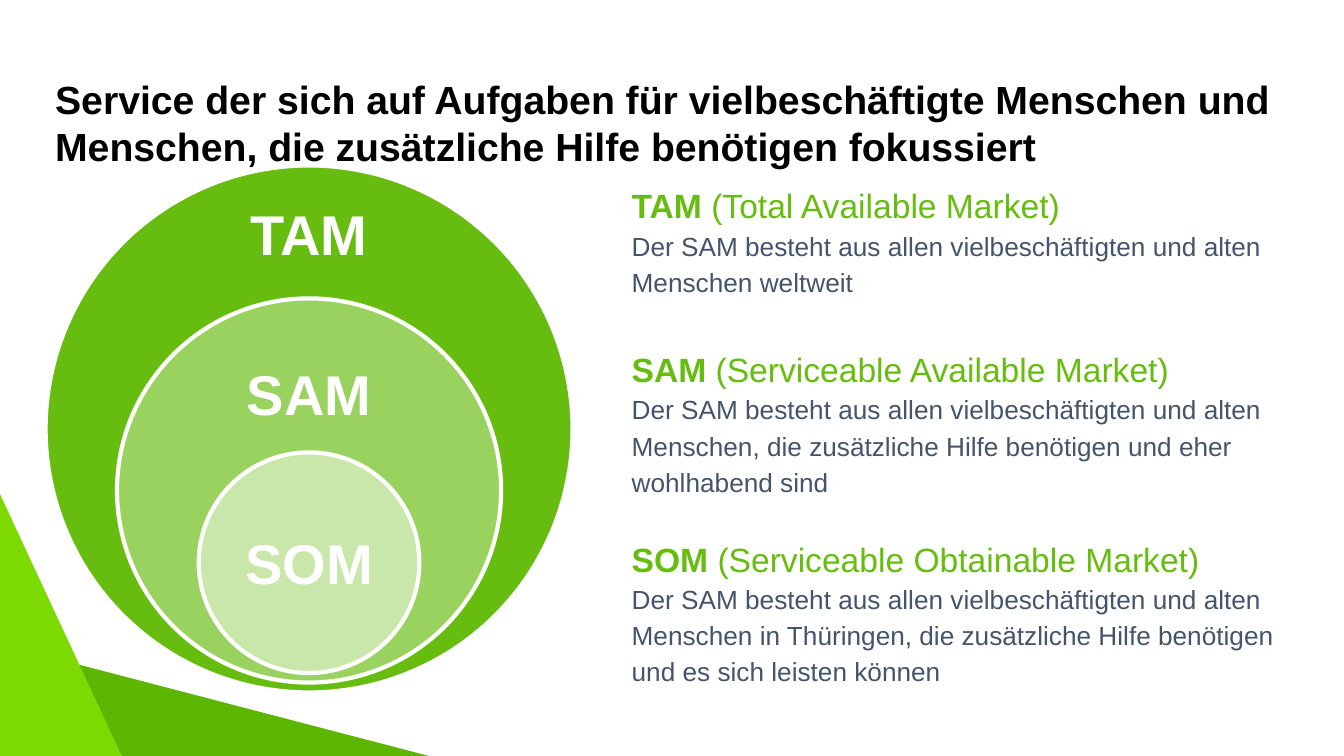
"""Market-size slide with nested TAM, SAM and SOM circles."""
from dataclasses import dataclass

from lxml import etree
from pptx import Presentation
from pptx.dml.color import RGBColor
from pptx.enum import shapes, text
from pptx.oxml import ns
from pptx.util import Cm, Pt

COLORS = {
    "black": "000000",
    "white": "FFFFFF",
    "green": "67BD0F",
    "dark_green": "5CB600",
    "bright_green": "7DDA00",
    "slate": "44546A",
}
FONT = "Arial"
CENTER_X = 7.79
LABEL_WIDTH, LABEL_HEIGHT = 5.56, 2.13
TITLE = ("Service der sich auf Aufgaben für vielbeschäftigte Menschen und "
         "Menschen, die zusätzliche Hilfe benötigen fokussiert")


@dataclass
class Corner:
    """A decorative triangle in the lower left corner."""
    width: float
    height: float
    color: str


@dataclass
class Market:
    """One market level: its circle, label and description."""
    name: str
    meaning: str
    description: str
    top: float
    diameter: float
    color: str
    opacity: int
    label_top: float
    space_before: float


CORNERS = [Corner(10.81, 2.82, "dark_green"), Corner(3.07, 6.6, "bright_green")]
MARKETS = [
    Market("TAM", "(Total Available Market)",
           "Der SAM besteht aus allen vielbeschäftigten und alten Menschen weltweit",
           4.17, 13.28, "green", 100, 4.8, 0),
    Market("SAM", "(Serviceable Available Market)",
           "Der SAM besteht aus allen vielbeschäftigten und alten Menschen, "
           "die zusätzliche Hilfe benötigen und eher wohlhabend sind",
           7.52, 9.68, "white", 33, 8.84, 32),
    Market("SOM", "(Serviceable Obtainable Market)",
           "Der SAM besteht aus allen vielbeschäftigten und alten Menschen in Thüringen, "
           "die zusätzliche Hilfe benötigen und es sich leisten können",
           11.4, 5.56, "white", 48, 13.11, 25),
]


def rgb(name: str) -> RGBColor:
    """Look up a named colour."""
    return RGBColor.from_string(COLORS[name])


def style_run(r, size: float, color: str, bold: bool = False) -> None:
    """Format one run."""
    r.font.name = FONT
    r.font.size = Pt(size)
    r.font.bold = bold
    r.font.color.rgb = rgb(color)


def set_frame(tf, anchor, inset: float) -> None:
    """Set wrapping, anchor and equal insets."""
    tf.word_wrap = True
    tf.auto_size = text.MSO_AUTO_SIZE.NONE
    tf.vertical_anchor = anchor
    tf.margin_left = tf.margin_right = tf.margin_top = tf.margin_bottom = Cm(inset)


def add_corner(slide, corner: Corner, bottom: float) -> None:
    """Draw a triangle resting in the lower left corner."""
    sp = slide.shapes.add_shape(
        shapes.MSO_SHAPE.RIGHT_TRIANGLE, 0, Cm(bottom - corner.height),
        Cm(corner.width), Cm(corner.height))
    sp.shadow.inherit = False
    sp.fill.solid()
    sp.fill.fore_color.rgb = rgb(corner.color)
    sp.line.fill.background()


def add_title(slide) -> None:
    """Place and format the title."""
    sp = slide.shapes.title
    sp.left, sp.top, sp.width, sp.height = Cm(1.14), Cm(1.65), Cm(32.72), Cm(2.13)
    tf = sp.text_frame
    tf.text = TITLE
    set_frame(tf, text.MSO_ANCHOR.TOP, 0.25)
    p = tf.paragraphs[0]
    p.alignment = text.PP_ALIGN.LEFT
    style_run(p.runs[0], 28, "black", True)


def add_circle(slide, market: Market) -> None:
    """Draw the circle of one market."""
    sp = slide.shapes.add_shape(
        shapes.MSO_SHAPE.OVAL, Cm(CENTER_X - market.diameter / 2), Cm(market.top),
        Cm(market.diameter), Cm(market.diameter))
    sp.shadow.inherit = False
    sp.fill.solid()
    sp.fill.fore_color.rgb = rgb(market.color)
    if market.opacity < 100:
        color = sp.fill._xPr.find(ns.qn("a:solidFill"))[0]
        etree.SubElement(color, ns.qn("a:alpha"), val=str(market.opacity * 1000))
    sp.line.color.rgb = rgb("white")
    sp.line.width = Pt(3)


def add_label(slide, market: Market) -> None:
    """Write the short name inside its circle."""
    sp = slide.shapes.add_textbox(
        Cm(CENTER_X - LABEL_WIDTH / 2), Cm(market.label_top),
        Cm(LABEL_WIDTH), Cm(LABEL_HEIGHT))
    tf = sp.text_frame
    tf.text = market.name
    set_frame(tf, text.MSO_ANCHOR.MIDDLE, 0.33)
    p = tf.paragraphs[0]
    p.alignment = text.PP_ALIGN.CENTER
    style_run(p.runs[0], 40, "white", True)


def add_descriptions(slide) -> None:
    """Write the market explanations beside the circles."""
    sp = slide.shapes.add_textbox(Cm(15.67), Cm(4.27), Cm(17.04), Cm(12.65))
    tf = sp.text_frame
    set_frame(tf, text.MSO_ANCHOR.TOP, 0.25)
    for i, market in enumerate(MARKETS):
        heading = tf.add_paragraph() if i else tf.paragraphs[0]
        if i:
            heading.space_before = Pt(market.space_before)
        for words, bold in ((market.name + " ", True), (market.meaning, False)):
            r = heading.add_run()
            r.text = words
            style_run(r, 24, "green", bold)
        body = tf.add_paragraph()
        body.text = market.description
        style_run(body.runs[0], 18.7, "slate")
        for p in (heading, body):
            p.line_spacing = 1.15


def main() -> None:
    """Build and save the slide."""
    prs = Presentation()
    prs.slide_width, prs.slide_height = Cm(33.87), Cm(19.05)
    slide = prs.slides.add_slide(prs.slide_layouts[5])
    for corner in CORNERS:
        add_corner(slide, corner, 19.05)
    add_title(slide)
    for market in MARKETS:
        add_circle(slide, market)
    for market in MARKETS:
        add_label(slide, market)
    add_descriptions(slide)
    prs.save("out.pptx")


if __name__ == "__main__":
    main()
